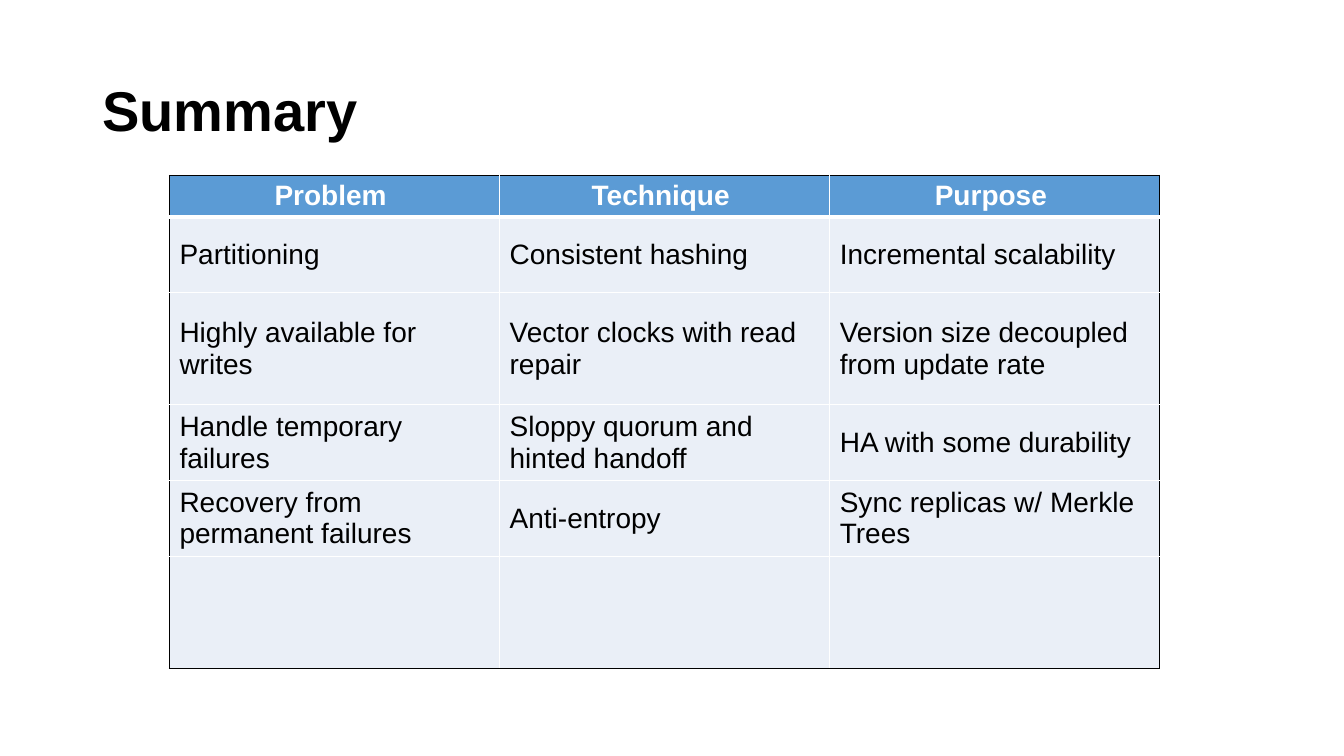
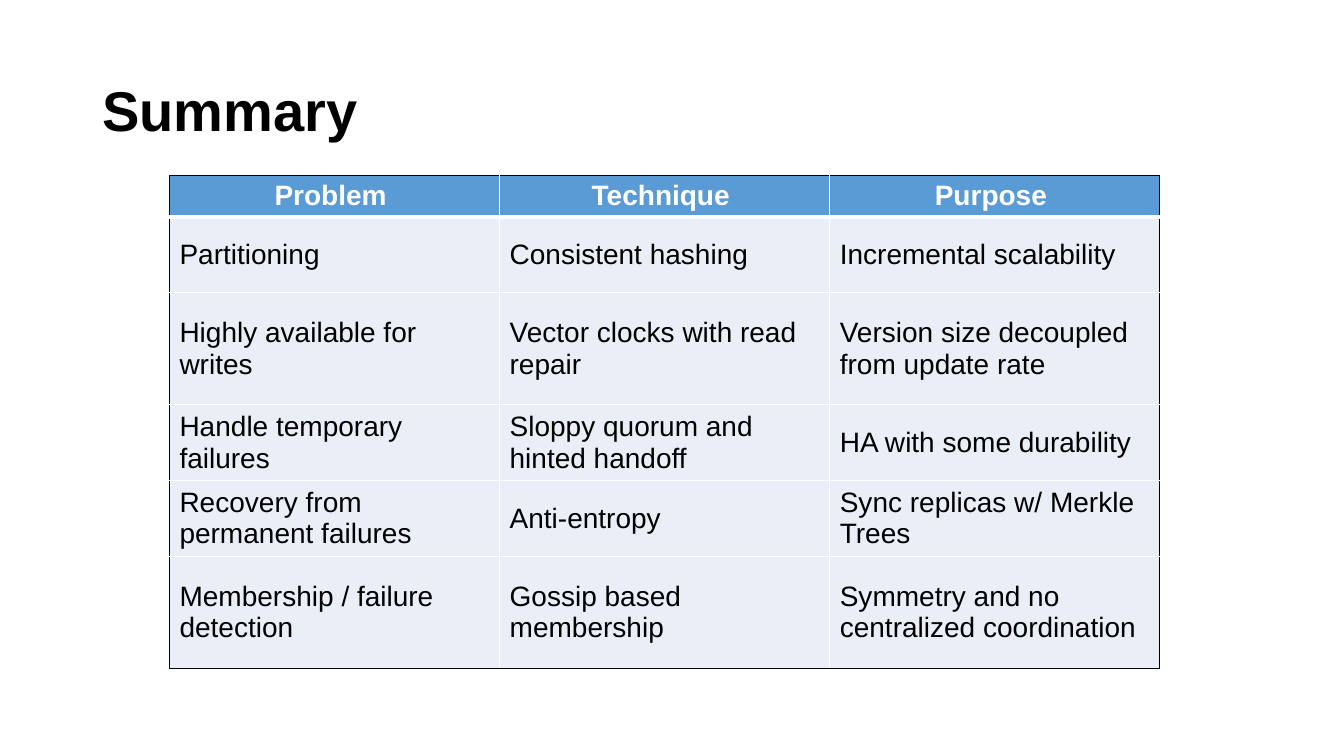
import pptx
import pptx.dml.color
import pptx.enum.text
import pptx.oxml
import pptx.oxml.ns
import pptx.util
from pptx.util import Cm, Pt

RGBColor = pptx.dml.color.RGBColor
PP_ALIGN = pptx.enum.text.PP_ALIGN
MSO_ANCHOR = pptx.enum.text.MSO_ANCHOR

# Content
TITLE = "Summary"
HEADER = ("Problem", "Technique", "Purpose")
ROWS = [
    ("Partitioning", "Consistent hashing", "Incremental scalability"),
    ("Highly available for writes", "Vector clocks with read repair",
     "Version size decoupled from update rate"),
    ("Handle temporary failures", "Sloppy quorum and hinted handoff",
     "HA with some durability"),
    ("Recovery from permanent failures", "Anti-entropy",
     "Sync replicas w/ Merkle Trees"),
]
EMPTY_ROW = ("", "", "")
MEMBERSHIP_ROW = ("Membership / failure detection", "Gossip based membership",
                  "Symmetry and no centralized coordination")
SLIDES = [ROWS + [EMPTY_ROW], ROWS + [MEMBERSHIP_ROW]]

# Shared style
FONT = "Arial"
BLACK = RGBColor(0x00, 0x00, 0x00)
WHITE = RGBColor(0xFF, 0xFF, 0xFF)
HEADER_BLUE = RGBColor(0x5B, 0x9B, 0xD5)
BODY_BLUE = RGBColor(0xEA, 0xEF, 0xF7)

TITLE_BOX = (Cm(2.33), Cm(1.02), Cm(29.21), Cm(3.68))
TABLE_LEFT, TABLE_TOP = Cm(4.27), Cm(4.42)
COLUMN_WIDTH = Cm(8.32)
ROW_HEIGHTS = [Cm(h) for h in (1.0, 1.91, 2.83, 1.91, 1.91, 2.83)]
HEADER_RIGHT_MARGIN = Cm(0.45)


def add_run(p, text, size, color, bold):
    r = p.add_run()
    r.text = text
    r.font.name = FONT
    r.font.size = Pt(size)
    r.font.bold = bold
    r.font.color.rgb = color


def add_title(s):
    title = s.shapes.title
    title.left, title.top, title.width, title.height = TITLE_BOX
    tf = title.text_frame
    tf.auto_size = pptx.enum.text.MSO_AUTO_SIZE.NONE
    tf.vertical_anchor = MSO_ANCHOR.MIDDLE
    p = tf.paragraphs[0]
    p.alignment = PP_ALIGN.LEFT
    p.line_spacing = 0.9
    add_run(p, TITLE, 40, BLACK, True)


def set_borders(cell, borders):
    """Borders are (color, points) in the order left, right, top, bottom."""
    tcPr = cell._tc.get_or_add_tcPr()
    for i, (side, (color, points)) in enumerate(zip("LRTB", borders)):
        tcPr.insert(i, pptx.oxml.parse_xml(
            f'<a:ln{side} {pptx.oxml.ns.nsdecls("a")} w="{Pt(points)}">'
            f'<a:solidFill><a:srgbClr val="{color}"/></a:solidFill>'
            f'</a:ln{side}>'))


def add_summary_table(s, rows):
    n_rows, n_cols = len(rows), len(HEADER)
    table = s.shapes.add_table(n_rows, n_cols, TABLE_LEFT, TABLE_TOP,
                               COLUMN_WIDTH * n_cols, sum(ROW_HEIGHTS)).table
    table.horz_banding = False
    for column in table.columns:
        column.width = COLUMN_WIDTH
    for row, height in zip(table.rows, ROW_HEIGHTS):
        row.height = height

    for i, texts in enumerate(rows):
        is_header = i == 0
        for j, text in enumerate(texts):
            cell = table.cell(i, j)
            cell.vertical_anchor = MSO_ANCHOR.MIDDLE
            cell.fill.solid()
            cell.fill.fore_color.rgb = HEADER_BLUE if is_header else BODY_BLUE
            p = cell.text_frame.paragraphs[0]
            if is_header:
                p.alignment = PP_ALIGN.CENTER
                cell.margin_right = HEADER_RIGHT_MARGIN
            if text:
                add_run(p, text, 20, WHITE if is_header else BLACK, is_header)

            # Black outline, white grid, thick rule under the header
            on_edge = (j == 0, j == n_cols - 1, is_header, i == n_rows - 1)
            points = (1, 1, 3 if i == 1 else 1, 3 if is_header else 1)
            set_borders(cell, [(BLACK if edge else WHITE, width)
                               for edge, width in zip(on_edge, points)])


def main():
    prs = pptx.Presentation()
    prs.slide_width, prs.slide_height = Cm(33.87), Cm(19.05)
    title_only = prs.slide_layouts[5]
    for rows in SLIDES:
        s = prs.slides.add_slide(title_only)
        add_title(s)
        add_summary_table(s, [HEADER] + rows)
    prs.save("out.pptx")


if __name__ == "__main__":
    main()
